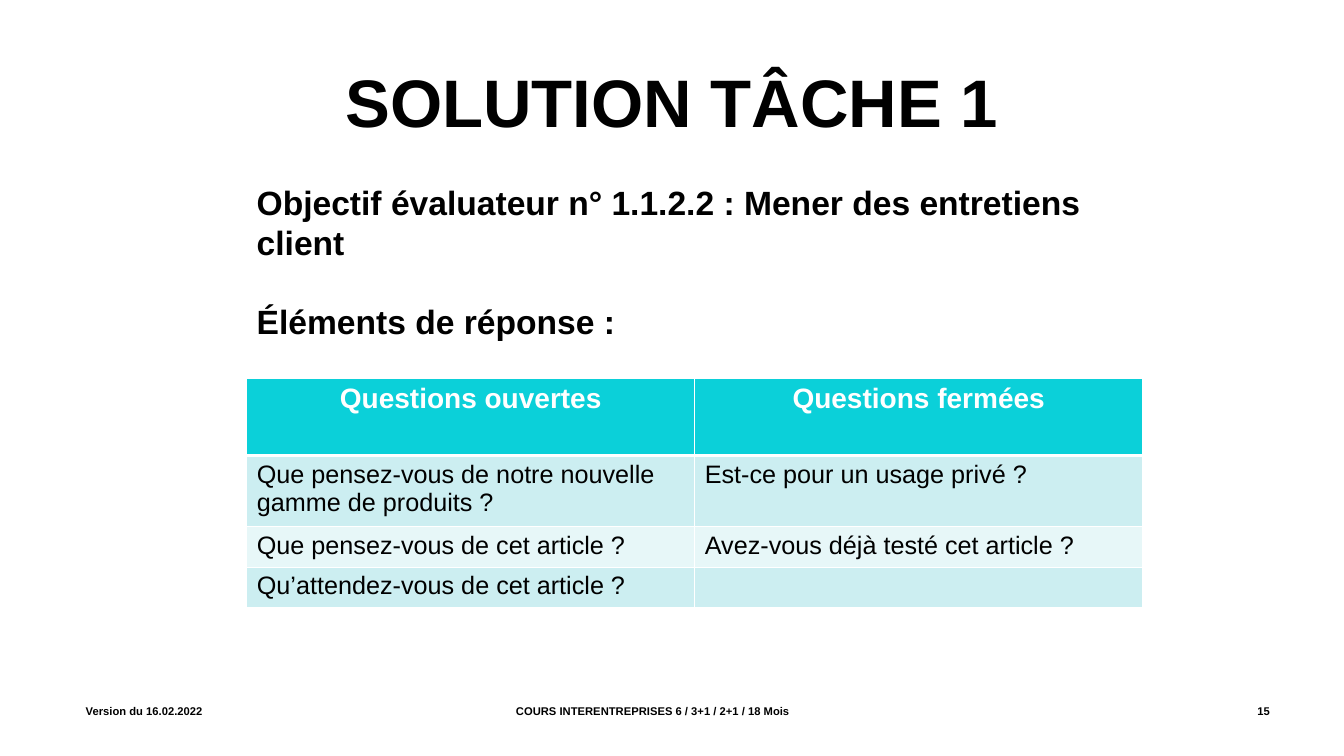
from lxml import etree
from pptx import Presentation
from pptx.dml.color import RGBColor
from pptx.enum.text import MSO_ANCHOR as Anchor, PP_ALIGN as Align
from pptx.oxml.ns import qn
from pptx.util import Cm, Pt

BLACK, WHITE, TURQUOISE = "000000", "FFFFFF", "0BD0D9"
BANDS = ["CCEEF1", "E7F7F8"]
QUESTIONS = [
    ("Questions ouvertes", "Questions fermées"),
    ("Que pensez-vous de notre nouvelle gamme de produits ?",
     "Est-ce pour un usage privé ?"),
    ("Que pensez-vous de cet article ?", "Avez-vous déjà testé cet article ?"),
    ("Qu’attendez-vous de cet article ?", ""),
]
ROW_HEIGHTS = [1.95, 1.78, 1.03, 1.03]


def color(value):
    return RGBColor.from_string(value)


class SlideBuilder:
    font_name = "Arial"

    def __init__(self, slide):
        self.slide = slide

    def fill_paragraph(self, paragraph, text, size, ink=BLACK, bold=True, **layout):
        """Fill a paragraph; layout holds paragraph attributes."""
        for name, value in layout.items():
            setattr(paragraph, name, value)
        if not text:
            return
        run = paragraph.add_run()
        run.text = text
        font_format = {"name": self.font_name, "size": Pt(size), "bold": bold}
        for name, value in font_format.items():
            setattr(run.font, name, value)
        run.font.color.rgb = color(ink)

    def text_box(self, box, texts, size, alignment=Align.LEFT,
                 anchor=Anchor.MIDDLE, gap=0):
        """Place paragraphs in a box, with gap points between them."""
        frame = self.slide.shapes.add_textbox(*map(Cm, box)).text_frame
        frame.word_wrap = True
        frame.vertical_anchor = anchor
        for index, text in enumerate(texts):
            paragraph = frame.add_paragraph() if index else frame.paragraphs[0]
            layout = {"alignment": alignment}
            if index:
                layout["space_before"] = Pt(gap)
            self.fill_paragraph(paragraph, text, size, **layout)

    def cell_borders(self, cell, widths):
        """Draw white borders; widths maps L, R, T and B to points."""
        properties = cell._tc.get_or_add_tcPr()
        for side, width in widths.items():
            line = etree.SubElement(properties, qn(f"a:ln{side}"), w=str(Pt(width)))
            fill = etree.SubElement(line, qn("a:solidFill"))
            etree.SubElement(fill, qn("a:srgbClr"), val=WHITE)

    def table(self, box, rows, row_heights):
        table = self.slide.shapes.add_table(
            len(rows), len(rows[0]), *map(Cm, box)).table
        for row, height in zip(table.rows, row_heights):
            row.height = Cm(height)
        for row_index, texts in enumerate(rows):
            header = row_index == 0
            background = TURQUOISE if header else BANDS[(row_index - 1) % 2]
            for column_index, text in enumerate(texts):
                cell = table.cell(row_index, column_index)
                self.cell_borders(cell, {"L": 1, "R": 1,
                                         "T": 3 if row_index == 1 else 1,
                                         "B": 3 if header else 1})
                cell.fill.solid()
                cell.fill.fore_color.rgb = color(background)
                self.fill_paragraph(cell.text_frame.paragraphs[0], text,
                                    size=20 if header else 18,
                                    ink=WHITE if header else BLACK, bold=header,
                                    alignment=Align.CENTER if header else Align.LEFT)


def main():
    presentation = Presentation()
    presentation.slide_width, presentation.slide_height = Cm(33.87), Cm(19.05)
    builder = SlideBuilder(
        presentation.slides.add_slide(presentation.slide_layouts[6]))

    builder.text_box((2.87, 0.51, 28.14, 4.04), ["SOLUTION TÂCHE 1"], 48, Align.CENTER)
    builder.text_box(
        (6.22, 4.45, 21.82, 4.9),
        ["Objectif évaluateur n° 1.1.2.2 : Mener des entretiens client",
         "Éléments de réponse :"],
        24, anchor=Anchor.TOP, gap=28)
    builder.table((6.22, 9.53, 22.58, sum(ROW_HEIGHTS)), QUESTIONS, ROW_HEIGHTS)

    footers = [
        (1.91, 4.45, "Version du 16.02.2022", Align.LEFT),
        (10.74, 11.43, "COURS INTERENTREPRISES 6 / 3+1 / 2+1 / 18 Mois", Align.CENTER),
        (30.73, 1.52, "15", Align.RIGHT),
    ]
    for left, width, text, alignment in footers:
        builder.text_box((left, 17.4, width, 1.04), [text], 8, alignment)

    presentation.save("out.pptx")


if __name__ == "__main__":
    main()
